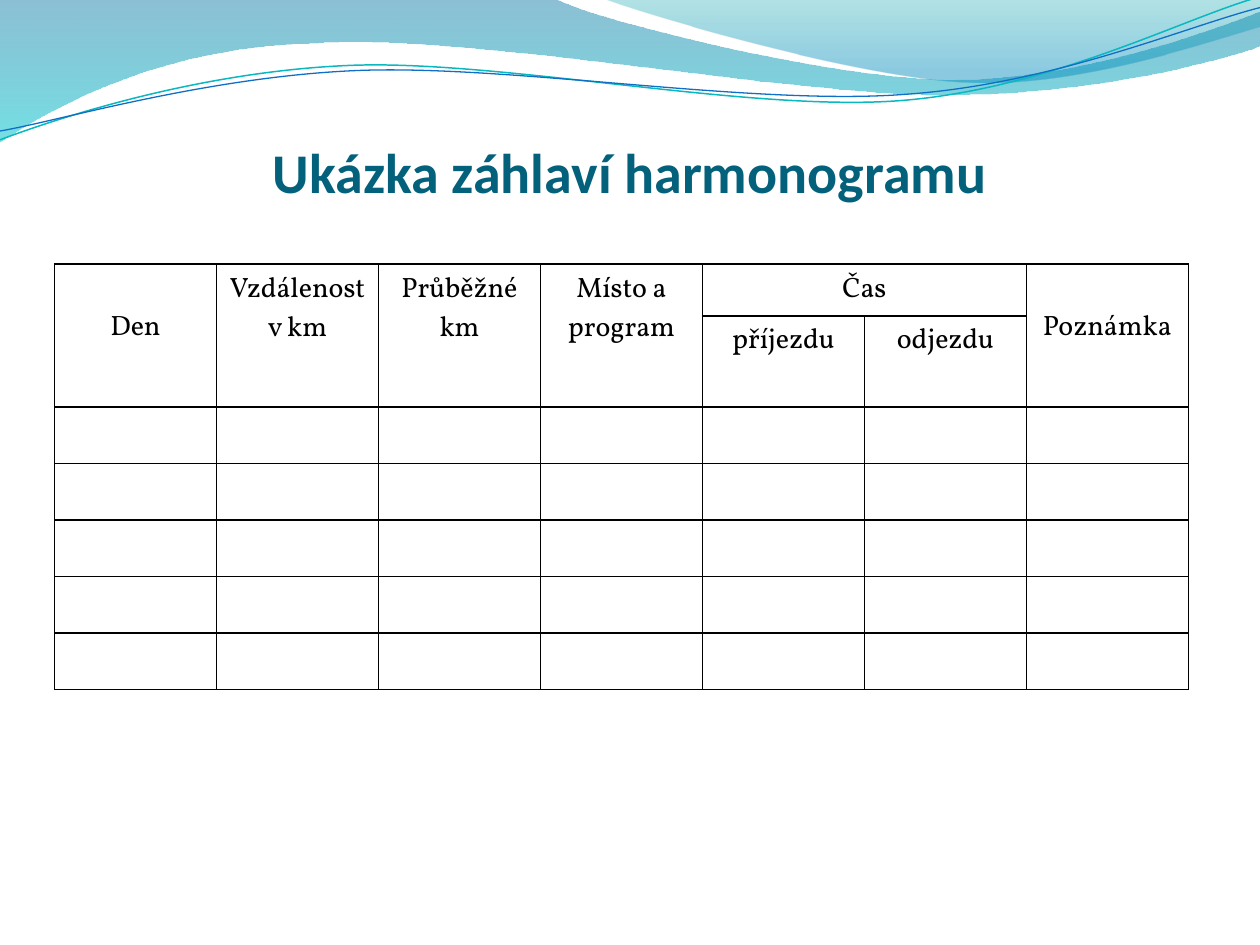
from itertools import chain
from math import cos, radians, sin

from lxml.etree import SubElement
from pptx import Presentation
from pptx.dml.color import RGBColor
from pptx.enum.text import MSO_ANCHOR, PP_ALIGN
from pptx.oxml.ns import qn
from pptx.util import Cm, Pt

WAVE_UNIT = Cm(2.54)
LINE_TILT = -2.7

# Each outline: start point, then line (2 numbers) or cubic curve (6 numbers) steps.
BANDS = [
    dict(box=(-0.01, -0.01, 10.02, 1.14),
         outline=[(0, 0), (4.4, -0.01), (4.76, 0.17, 6.64, 0.63, 7.58, 0.63),
                  (8.53, 0.63, 9.58, 0.26, 10, 0.09), (10.01, 0.36),
                  (9.83, 0.44, 8.7, 0.76, 7.46, 0.75),
                  (6.22, 0.75, 3.82, 0.28, 2.57, 0.34),
                  (1.29, 0.36, 0.46, 0.83, -0.01, 1.13), (0, 0)],
         stops=[(0, "0074A1", 45), (1, "00C6CF", 55)]),
    dict(box=(4.79, -0.01, 5.21, 0.7),
         outline=[(4.79, -0.01), (5.09, 0.11, 6.82, 0.62, 7.69, 0.65),
                  (8.56, 0.69, 9.61, 0.32, 10, 0.21), (10, 0), (4.79, -0.01)],
         stops=[(0, "00A1A9", 30), (0.8, "008BBF", 45)]),
]
LINES = [
    dict(box=(-0.02, 0.22, 10.02, 0.71),
         outline=[(0, 1.11), (0.48, 0.93, 1.58, 0.57, 2.77, 0.52),
                  (3.95, 0.47, 5.93, 0.89, 7.13, 0.8),
                  (8.33, 0.71, 9.38, 0.15, 9.98, -0.02)],
         hex_value="0AB8BF", weight=0.85),
    dict(box=(-0.02, 0.3, 10.03, 0.58),
         outline=[(0, 1.04), (0.47, 0.96, 1.64, 0.61, 2.83, 0.56),
                  (4.03, 0.51, 5.97, 0.84, 7.17, 0.75),
                  (8.36, 0.67, 9.41, 0.21, 10, 0.06)],
         hex_value="0F6FC6", weight=0.75),
]

COLUMNS = 7
ROW_HEIGHTS = [0.89] * 2 + [1.04] * 5
FIRST_LINE, SECOND_LINE = Cm(0.13), Cm(0.91)
# (row, column, rows spanned, columns spanned, text, top margin)
HEADINGS = [
    (0, 0, 2, 1, "Den", SECOND_LINE),
    (0, 1, 2, 1, "Vzdálenost v km", FIRST_LINE),
    (0, 2, 2, 1, "Průběžné km", FIRST_LINE),
    (0, 3, 2, 1, "Místo a program", FIRST_LINE),
    (0, 4, 1, 2, "Čas", FIRST_LINE),
    (0, 6, 2, 1, "Poznámka", SECOND_LINE),
    (1, 4, 1, 1, "příjezdu", FIRST_LINE),
    (1, 5, 1, 1, "odjezdu", FIRST_LINE),
]


def color(hex_value):
    return RGBColor.from_string(hex_value)


def set_format(target, values):
    for attribute, value in values.items():
        setattr(target, attribute, value)


def add_curve(shapes, left, top, box, outline, tilt=0):
    """Add a freeform with cubic curves, framed by box and turned by tilt degrees."""
    x0, y0, width, height = box
    center_x, center_y = x0 + width / 2, y0 + height / 2
    turn = radians(-tilt)

    def to_frame(x, y):
        dx, dy = x - center_x, y - center_y
        return (round((dx * cos(turn) - dy * sin(turn) + width / 2) * WAVE_UNIT),
                round((dx * sin(turn) + dy * cos(turn) + height / 2) * WAVE_UNIT))

    steps = [[to_frame(*step[i:i + 2]) for i in range(0, len(step), 2)] for step in outline]
    start, *rest = chain.from_iterable(steps)
    builder = shapes.build_freeform(*start)
    builder.add_line_segments(rest, close=outline[0] == outline[-1])
    shape = builder.convert_to_shape()

    path = next(shape._element.iter(qn("a:path")))
    offset_x, offset_y = shape.left, shape.top
    for point in path.iter(qn("a:pt")):
        point.set("x", str(int(point.get("x")) + offset_x))
        point.set("y", str(int(point.get("y")) + offset_y))
    segments = iter(path.findall(qn("a:lnTo")))
    for step in steps[1:]:
        first, *others = [next(segments) for _ in step]
        if others:
            first.tag = qn("a:cubicBezTo")
        for segment in others:
            first.append(segment[0])
            path.remove(segment)

    frame = dict(left=round(left + x0 * WAVE_UNIT), top=round(top + y0 * WAVE_UNIT),
                 width=round(width * WAVE_UNIT), height=round(height * WAVE_UNIT))
    set_format(shape, dict(frame, rotation=tilt % 360))
    path.set("w", str(frame["width"]))
    path.set("h", str(frame["height"]))
    shape.shadow.inherit = False
    return shape


def fill_gradient(fill, stops):
    """Fill from top to bottom with (position, colour, opacity percent) stops."""
    fill.gradient()
    fill.gradient_angle = 270
    for stop, (position, hex_value, _) in zip(fill.gradient_stops, stops):
        stop.position = position
        stop.color.rgb = color(hex_value)
    for srgb, (_, _, opacity) in zip(fill._xPr.iter(qn("a:srgbClr")), stops):
        SubElement(srgb, qn("a:alpha"), val=str(opacity * 1000))


def add_waves(slide, left, top):
    for band in BANDS:
        wave = add_curve(slide.shapes, left, top, band["box"], band["outline"])
        fill_gradient(wave.fill, band["stops"])
        wave.line.fill.background()
    line_group = slide.shapes.add_group_shape()
    for line in LINES:
        wave = add_curve(line_group.shapes, left, top, line["box"], line["outline"], LINE_TILT)
        wave.fill.background()
        wave.line.color.rgb = color(line["hex_value"])
        wave.line.width = Pt(line["weight"])
    # Let the group frame follow the final frames of its lines.
    line_group._element.recalculate_extents()


def place_title(slide, left, top, width, height):
    title = slide.shapes.title
    set_format(title, dict(left=left, top=top, width=width, height=height))
    frame = title.text_frame
    set_format(frame, dict(text="Ukázka záhlaví harmonogramu", word_wrap=True,
                           vertical_anchor=MSO_ANCHOR.BOTTOM, margin_left=0,
                           margin_right=0, margin_top=Cm(0.13), margin_bottom=0))
    heading = frame.paragraphs[0]
    heading.alignment = PP_ALIGN.CENTER
    set_format(heading.runs[0].font, dict(name="Calibri", size=Pt(32), bold=True))
    heading.runs[0].font.color.rgb = color("04617B")
    slide.shapes._spTree.append(title._element)


def draw_borders(cell):
    properties = cell._tc.get_or_add_tcPr()
    for index, side in enumerate(("lnL", "lnR", "lnT", "lnB")):
        border = properties.makeelement(qn(f"a:{side}"), {"w": str(Pt(1))})
        solid = SubElement(border, qn("a:solidFill"))
        SubElement(solid, qn("a:srgbClr"), val="000000")
        properties.insert(index, border)


def set_empty_font(cell):
    end = SubElement(cell.text_frame.paragraphs[0]._p, qn("a:endParaRPr"), sz="1800")
    SubElement(end, qn("a:latin"), typeface="Vollkorn")


def add_schedule(slide, left, top, width):
    schedule = slide.shapes.add_table(len(ROW_HEIGHTS), COLUMNS, left, top, width,
                                      Cm(sum(ROW_HEIGHTS))).table
    set_format(schedule, dict(first_row=False, horz_banding=False))
    for row, height in zip(schedule.rows, ROW_HEIGHTS):
        row.height = Cm(height)
    for index, cell in enumerate(schedule.iter_cells()):
        cell.fill.background()
        draw_borders(cell)
        if index >= 2 * COLUMNS:
            set_empty_font(cell)
    for row, column, row_span, column_span, text, margin_top in HEADINGS:
        cell = schedule.cell(row, column)
        if row_span * column_span > 1:
            cell.merge(schedule.cell(row + row_span - 1, column + column_span - 1))
        set_format(cell, dict(text=text, margin_top=margin_top))
        label = cell.text_frame.paragraphs[0]
        label.alignment = PP_ALIGN.CENTER
        set_format(label.runs[0].font, dict(name="Vollkorn", size=Pt(16)))
        label.runs[0].font.color.rgb = color("000000")


def main():
    deck = Presentation()
    set_format(deck, dict(slide_width=Cm(25.4), slide_height=Cm(19.05)))
    slide = deck.slides.add_slide(deck.slide_layouts[5])
    add_waves(slide, Cm(0), Cm(0))
    place_title(slide, Cm(1.27), Cm(1.96), Cm(22.86), Cm(2.16))
    add_schedule(slide, Cm(1.1), Cm(5.32), Cm(22.86))
    deck.save("out.pptx")


if __name__ == "__main__":
    main()
